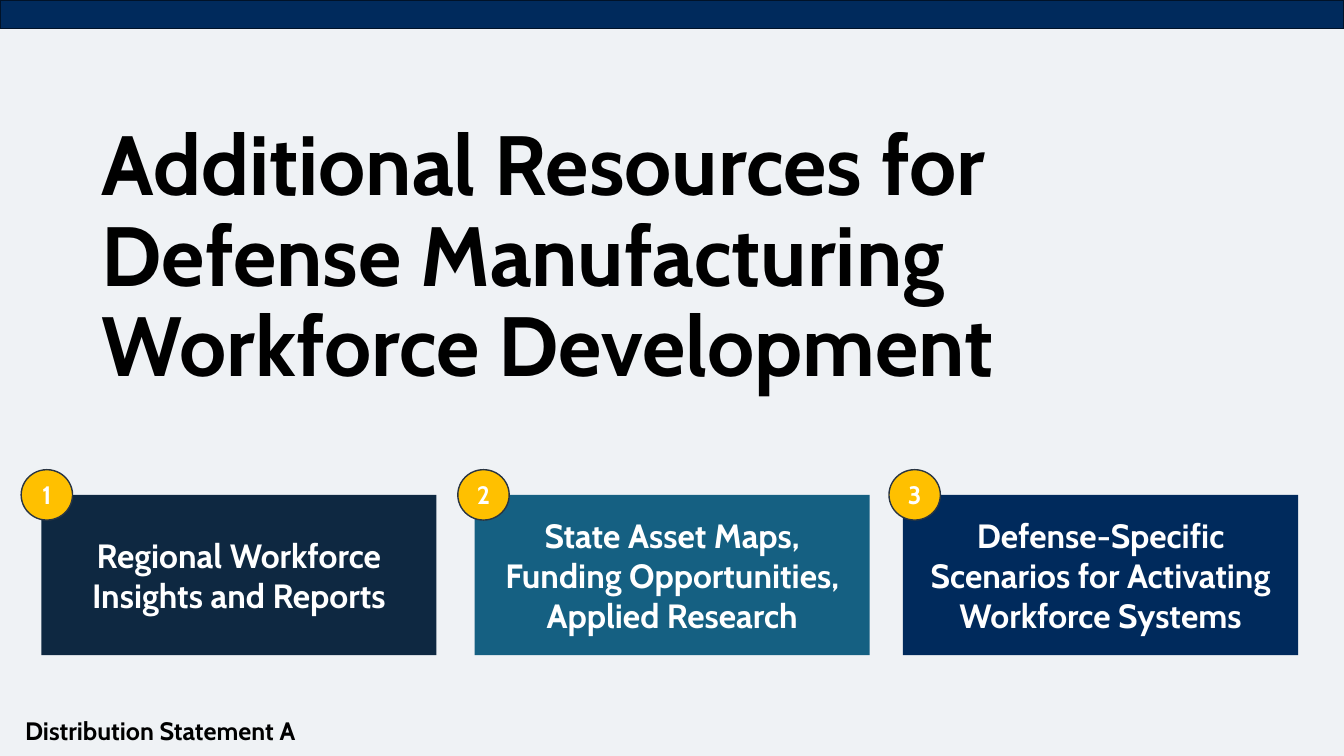
import pptx
import pptx.dml.color
import pptx.enum.shapes
import pptx.enum.text
import pptx.util

Pt = pptx.util.Pt
ALIGN = pptx.enum.text.PP_ALIGN
ANCHOR = pptx.enum.text.MSO_ANCHOR
PRESET = pptx.enum.shapes.MSO_SHAPE

TITLE = "Additional Resources for Defense Manufacturing Workforce Development"
STATEMENT = "Distribution Statement A"
RESOURCES = [
    {"text": "Regional Workforce Insights and Reports", "fill": "midnight", "card_left": 29.5, "badge_left": 15.1},
    {"text": "State Asset Maps, Funding Opportunities, Applied Research", "fill": "teal", "card_left": 339, "badge_left": 327},
    {"text": "Defense-Specific Scenarios for Activating Workforce Systems", "fill": "navy", "card_left": 645, "badge_left": 635},
]
COLORS = {
    "background": "EFF2F5",
    "navy": "002A5C",
    "navy_line": "001228",
    "midnight": "0E2841",
    "teal": "156082",
    "gold": "FFC000",
    "gold_line": "293543",
    "white": "FFFFFF",
    "black": "000000",
}
FONT = "Cabin"
SLIDE_WIDTH, SLIDE_HEIGHT = 960, 540
BAR_HEIGHT = 20.2
CARD_TOP, CARD_WIDTH, CARD_HEIGHT = 353.5, 282.2, 114.5
BADGE_WIDTH, BADGE_HEIGHT = 36.7, 36


def color(name):
    return pptx.dml.color.RGBColor.from_string(COLORS[name])


def write_text(shape, text, size, font_color="black", align=ALIGN.LEFT,
               anchor=ANCHOR.MIDDLE, spacing=1.0, inset=7.2):
    frame = shape.text_frame
    frame.word_wrap = True
    frame.auto_size = pptx.enum.text.MSO_AUTO_SIZE.NONE
    frame.vertical_anchor = anchor
    frame.margin_left = frame.margin_right = Pt(inset)
    frame.margin_top = frame.margin_bottom = Pt(min(inset, 7.2) if anchor == ANCHOR.MIDDLE else 3.6)
    paragraph = frame.paragraphs[0]
    paragraph.alignment = align
    paragraph.line_spacing = spacing
    run = paragraph.add_run()
    run.text = text
    run.font.name = FONT
    run.font.size = Pt(size)
    run.font.bold = True
    run.font.color.rgb = color(font_color)


def add_filled_shape(slide, preset, left, top, width, height, fill, line=None):
    shape = slide.shapes.add_shape(preset, Pt(left), Pt(top), Pt(width), Pt(height))
    shape.shadow.inherit = False
    shape.fill.solid()
    shape.fill.fore_color.rgb = color(fill)
    if line:
        shape.line.color.rgb = color(line)
        shape.line.width = Pt(1)
    else:
        shape.line.fill.background()
    return shape


def main():
    presentation = pptx.Presentation()
    presentation.slide_width = Pt(SLIDE_WIDTH)
    presentation.slide_height = Pt(SLIDE_HEIGHT)
    slide = presentation.slides.add_slide(presentation.slide_layouts[5])
    slide.background.fill.solid()
    slide.background.fill.fore_color.rgb = color("background")

    add_filled_shape(slide, PRESET.RECTANGLE, 0, 0, SLIDE_WIDTH, BAR_HEIGHT, "navy", "navy_line")

    title = slide.shapes.title
    title.left, title.top, title.width, title.height = Pt(65.5), Pt(61.2), Pt(828), Pt(224.6)
    write_text(title, TITLE, 60, anchor=ANCHOR.BOTTOM, spacing=0.9)

    for resource in RESOURCES:
        card = add_filled_shape(slide, PRESET.RECTANGLE, resource["card_left"], CARD_TOP,
                                CARD_WIDTH, CARD_HEIGHT, resource["fill"])
        write_text(card, resource["text"], 24, font_color="white", align=ALIGN.CENTER)

    for number, resource in enumerate(RESOURCES, start=1):
        badge = add_filled_shape(slide, PRESET.OVAL, resource["badge_left"], CARD_TOP - BADGE_HEIGHT / 2,
                                 BADGE_WIDTH, BADGE_HEIGHT, "gold", "gold_line")
        write_text(badge, str(number), 18, font_color="white", align=ALIGN.CENTER, inset=0)

    statement = slide.shapes.add_textbox(Pt(10.8), Pt(506.2), Pt(514), Pt(30.2))
    write_text(statement, STATEMENT, 18, anchor=ANCHOR.BOTTOM, spacing=0.9)

    presentation.save("out.pptx")


if __name__ == "__main__":
    main()
